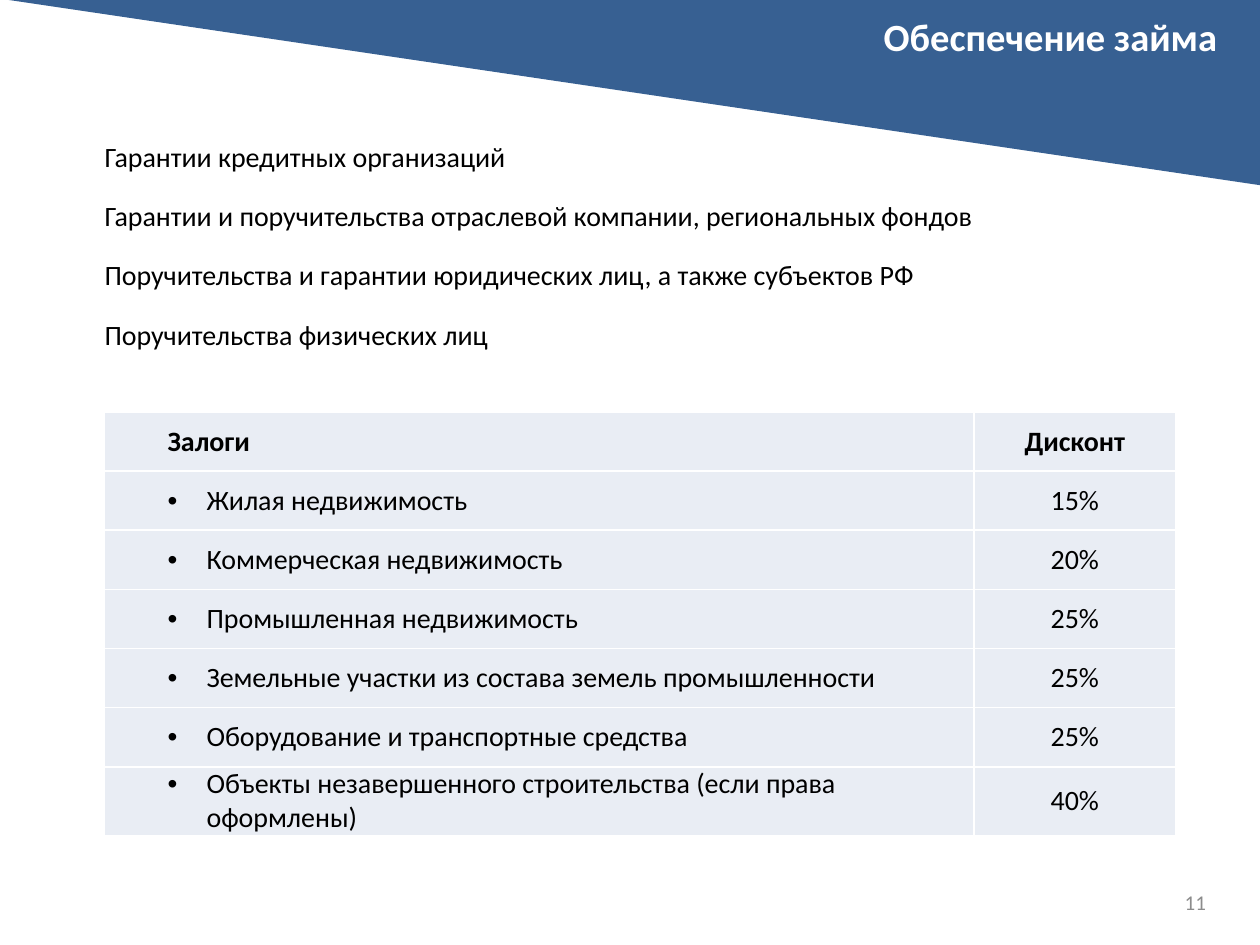
from dataclasses import dataclass

from lxml.etree import SubElement
from pptx import Presentation
from pptx.dml.color import RGBColor
from pptx.enum.text import MSO_ANCHOR, MSO_AUTO_SIZE, PP_ALIGN
from pptx.oxml.ns import qn
from pptx.slide import Slide
from pptx.util import Inches, Pt

BLUE, PALE, WHITE = "376092", "E9EDF4", "FFFFFF"
BLACK, GREY = "000000", "8C8C8C"

GRANTS = [
    "Гарантии кредитных организаций",
    "Гарантии и поручительства отраслевой компании, региональных фондов",
    "Поручительства и гарантии юридических лиц, а также субъектов РФ",
    "Поручительства физических лиц",
]
PLEDGES = [
    ("Жилая недвижимость", "15%"),
    ("Коммерческая недвижимость", "20%"),
    ("Промышленная недвижимость", "25%"),
    ("Земельные участки из состава земель промышленности", "25%"),
    ("Оборудование и транспортные средства", "25%"),
    ("Объекты незавершенного строительства (если права оформлены)", "40%"),
]


def paint(code):
    return RGBColor.from_string(code)


def write(frame, text, size=16, color=BLACK, bold=False, font="Calibri",
          align=PP_ALIGN.LEFT, left=0, hang=0, bullet=None):
    para = frame.paragraphs[0]
    para.alignment = align
    props = para._p.get_or_add_pPr()
    if left:
        para.level = 1
        props.set("marL", str(Inches(left)))
        props.set("indent", str(Inches(hang)))
    if bullet:
        SubElement(props, qn("a:buFont"), typeface="Arial")
        SubElement(props, qn("a:buChar"), char=bullet)
    run = para.add_run()
    run.text = text
    run.font.name = font
    run.font.size = Pt(size)
    run.font.bold = bold
    run.font.color.rgb = paint(color)


def place(shape, left, top, width, height):
    shape.left, shape.top = Inches(left), Inches(top)
    shape.width, shape.height = Inches(width), Inches(height)


@dataclass
class Deck:
    slide: Slide
    edge: str = WHITE
    line: float = 1

    def wedge(self, points, color):
        spots = [(Inches(x), Inches(y)) for x, y in points]
        form = self.slide.shapes.build_freeform(*spots[0])
        form.add_line_segments(spots[1:], close=True)
        shape = form.convert_to_shape()
        shape.shadow.inherit = False
        shape.fill.solid()
        shape.fill.fore_color.rgb = paint(color)
        shape.line.fill.background()

    def title(self, text, box, **style):
        shape = self.slide.shapes.title
        self.slide.shapes._spTree.append(shape._element)
        place(shape, *box)
        frame = shape.text_frame
        frame.word_wrap = True
        frame.vertical_anchor = MSO_ANCHOR.TOP
        frame.auto_size = MSO_AUTO_SIZE.SHAPE_TO_FIT_TEXT
        write(frame, text, **style)

    def label(self, text, box, **style):
        frame = self.slide.shapes.add_textbox(*map(Inches, box)).text_frame
        frame.word_wrap = True
        frame.vertical_anchor = MSO_ANCHOR.MIDDLE
        write(frame, text, **style)

    def grid(self, left, top, widths, height, count):
        box = (left, top, sum(widths), height * count)
        table = self.slide.shapes.add_table(
            count, len(widths), *map(Inches, box)).table
        table.first_row = table.horz_banding = False
        for col, width in zip(table.columns, widths):
            col.width = Inches(width)
        for row in table.rows:
            row.height = Inches(height)
        return table

    def cell(self, cell, fill, anchor, text=None, **style):
        props = cell._tc.get_or_add_tcPr()
        for side in ("lnL", "lnR", "lnT", "lnB"):
            rule = SubElement(props, qn("a:" + side), w=str(Pt(self.line)))
            solid = SubElement(rule, qn("a:solidFill"))
            SubElement(solid, qn("a:srgbClr"), val=self.edge)
        cell.fill.solid()
        cell.fill.fore_color.rgb = paint(fill)
        cell.margin_left = cell.margin_right = 0
        cell.margin_top = cell.margin_bottom = 0
        cell.vertical_anchor = anchor
        if text:
            write(cell.text_frame, text, **style)


def main():
    show = Presentation()
    show.slide_width, show.slide_height = Inches(10), Inches(7.5)
    deck = Deck(show.slides.add_slide(show.slide_layouts[5]))

    start = len(GRANTS) + 1
    table = deck.grid(0.83, 0.92, (6.9, 1.6), 0.47, start + 1 + len(PLEDGES))
    for row in range(start):
        text = GRANTS[row] if row < len(GRANTS) else None
        for col in range(2):
            deck.cell(table.cell(row, col), WHITE, MSO_ANCHOR.BOTTOM,
                      text if col == 0 else None)
        if text:
            table.cell(row, 0).merge(table.cell(row, 1))

    for row, (name, rate) in enumerate([("Залоги", "Дисконт")] + PLEDGES, start):
        head = row == start
        dent = dict(left=0.5) if head else dict(left=0.81, hang=-0.31, bullet="•")
        deck.cell(table.cell(row, 0), PALE, MSO_ANCHOR.MIDDLE, name,
                  bold=head, **dent)
        deck.cell(table.cell(row, 1), PALE, MSO_ANCHOR.MIDDLE, rate,
                  bold=head, align=PP_ALIGN.CENTER)

    deck.wedge([(10, 1.47), (10, -0.03), (0, -0.01)], BLUE)
    deck.title("Обеспечение займа", (3.03, 0.05, 6.73, 0.47), size=22,
               color=WHITE, bold=True, align=PP_ALIGN.RIGHT)
    deck.label("11", (7.34, 6.96, 2.33, 0.4), size=12, color=GREY,
               align=PP_ALIGN.RIGHT)
    show.save("out.pptx")


if __name__ == "__main__":
    main()
